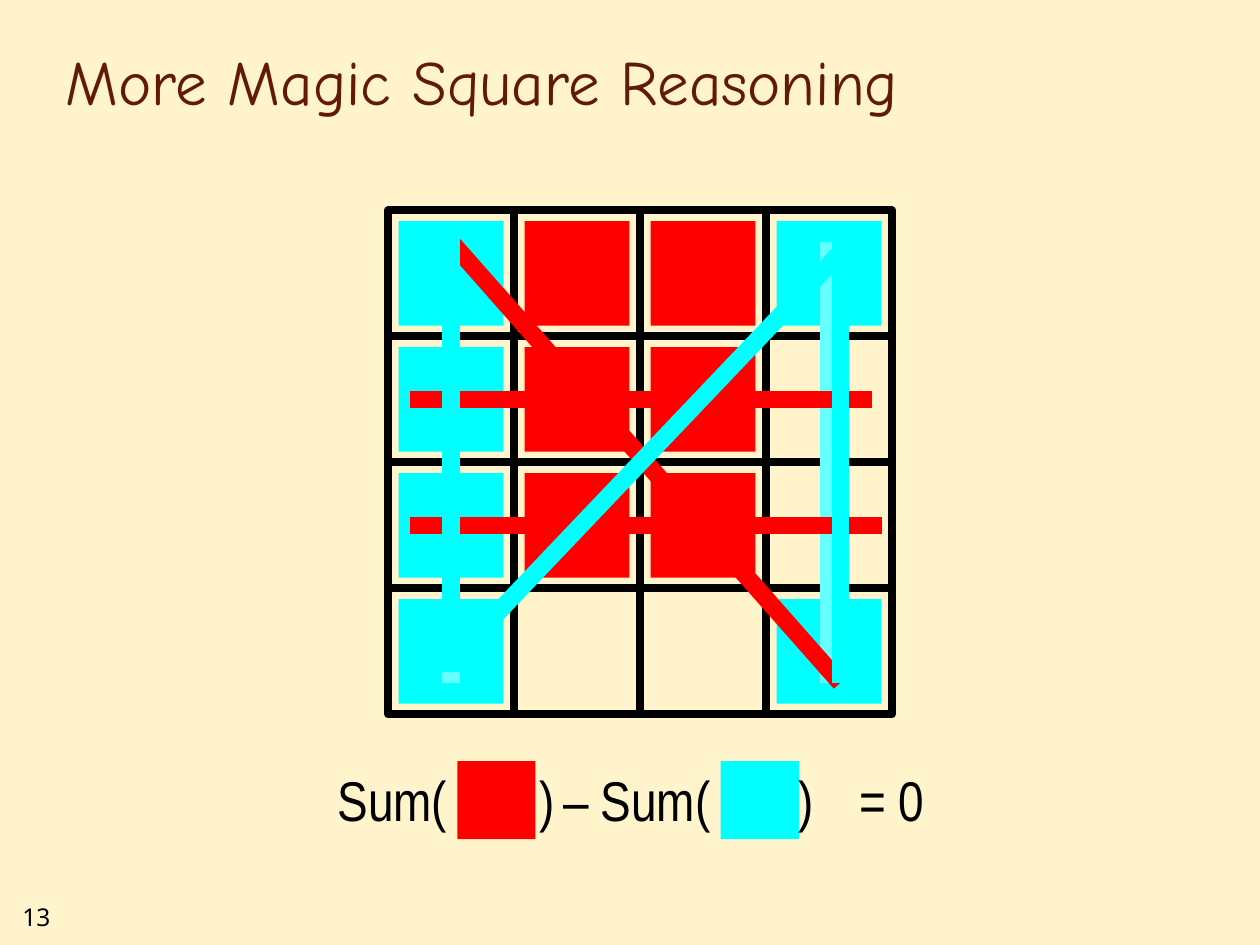
from lxml import etree
from pptx import Presentation
from pptx.dml.color import RGBColor as RGB
from pptx.enum.shapes import MSO_CONNECTOR as CONN, MSO_SHAPE as SHAPE
from pptx.oxml.ns import qn
from pptx.util import Inches, Pt

COLORS = {
    "background": "FFF2C0", "title": "631908", "black": "000000",
    "red": "FF0000", "cyan": "00FFFF", "pale": "66FFFF",
}
GRID_LEFT, GRID_TOP, CELL, SIZE = 3.08, 1.67, 1, 4
TILE, TILE_GAP = 0.83, 0.085
TILES = [
    ("cyan", "red", "red", "cyan"),
    ("cyan", "red", "red", None),
    ("cyan", "red", "red", None),
    ("cyan", None, None, "cyan"),
]
STROKES = [
    ("red", 3.25, 3.17, 6.83, 3.17),
    ("red", 3.25, 4.17, 6.92, 4.17),
    ("pale", 3.58, 5.42, 3.58, 1.92),
    ("pale", 6.58, 5.42, 6.58, 1.92),
    ("red", 6.67, 5.42, 3.58, 1.92),
    ("red", 3.33, 3.17, 6.92, 3.17),
    ("red", 3.33, 4.17, 7, 4.17),
    ("cyan", 6.67, 5.42, 6.67, 1.92),
    ("cyan", 3.58, 5.25, 6.75, 1.92),
    ("cyan", 3.58, 5.33, 3.58, 1.83),
]
FORMULA_TOP, FORMULA_HEIGHT, SWATCH = 6.03, 0.63, 0.62
SWATCHES = [("red", 3.63), ("cyan", 5.72)]
FORMULA = [
    ("Sum(", 2.58, 1.5), (")", 4.18, 0.4), ("–", 4.37, 0.62),
    ("Sum(", 4.67, 1.2), (")", 6.24, 0.4), ("= 0", 6.72, 1.11),
]


def rgb(name):
    return RGB.from_string(COLORS[name])


def add_square(s, x, y, side, fill=None):
    sp = s.shapes.add_shape(SHAPE.RECTANGLE, Inches(x), Inches(y), Inches(side), Inches(side))
    sp.shadow.inherit = False
    if fill:
        sp.fill.solid()
        sp.fill.fore_color.rgb = rgb(fill)
        sp.line.fill.background()
    else:
        sp.fill.background()
        sp.line.color.rgb = rgb("black")
        sp.line.width = Pt(4.5)


def add_stroke(s, color, x1, y1, x2, y2):
    line = s.shapes.add_connector(CONN.STRAIGHT, Inches(x1), Inches(y1), Inches(x2), Inches(y2))
    line.line.color.rgb = rgb(color)
    line.line.width = Pt(10)
    etree.SubElement(line._element.spPr, qn("a:effectLst"))


def add_text(s, text, x, y, w, h, font, size, color="black"):
    tf = s.shapes.add_textbox(Inches(x), Inches(y), Inches(w), Inches(h)).text_frame
    tf.word_wrap = True
    p = tf.paragraphs[0]
    p.text = text
    p.font.name = font
    p.font.size = Pt(size)
    p.font.color.rgb = rgb(color)


def main():
    prs = Presentation()
    prs.slide_width, prs.slide_height = Inches(10), Inches(7.5)
    s = prs.slides.add_slide(prs.slide_layouts[6])
    fill = s.background.fill
    fill.solid()
    fill.fore_color.rgb = rgb("background")
    tint = next(s._element.iter(qn("a:srgbClr")))
    etree.SubElement(tint, qn("a:alpha"), val="82000")

    add_text(s, "13", 0.08, 7.11, 0.75, 0.34, "Noto Sans", 14)
    add_text(s, "More Magic Square Reasoning", 0.42, 0.29, 9.08, 1.21, "Comic Neue", 36, "title")

    cells = [(GRID_LEFT + c * CELL, GRID_TOP + r * CELL, TILES[r][c])
             for r in range(SIZE) for c in range(SIZE)]
    for x, y, _ in cells:
        add_square(s, x, y, CELL)
    for x, y, color in cells:
        if color:
            add_square(s, x + TILE_GAP, y + TILE_GAP, TILE, color)
    for stroke in STROKES:
        add_stroke(s, *stroke)

    for color, x in SWATCHES:
        add_square(s, x, FORMULA_TOP + 0.01, SWATCH, color)
    for text, x, w in FORMULA:
        add_text(s, text, x, FORMULA_TOP, w, FORMULA_HEIGHT, "Arial Narrow", 32)

    prs.save("out.pptx")


if __name__ == "__main__":
    main()
